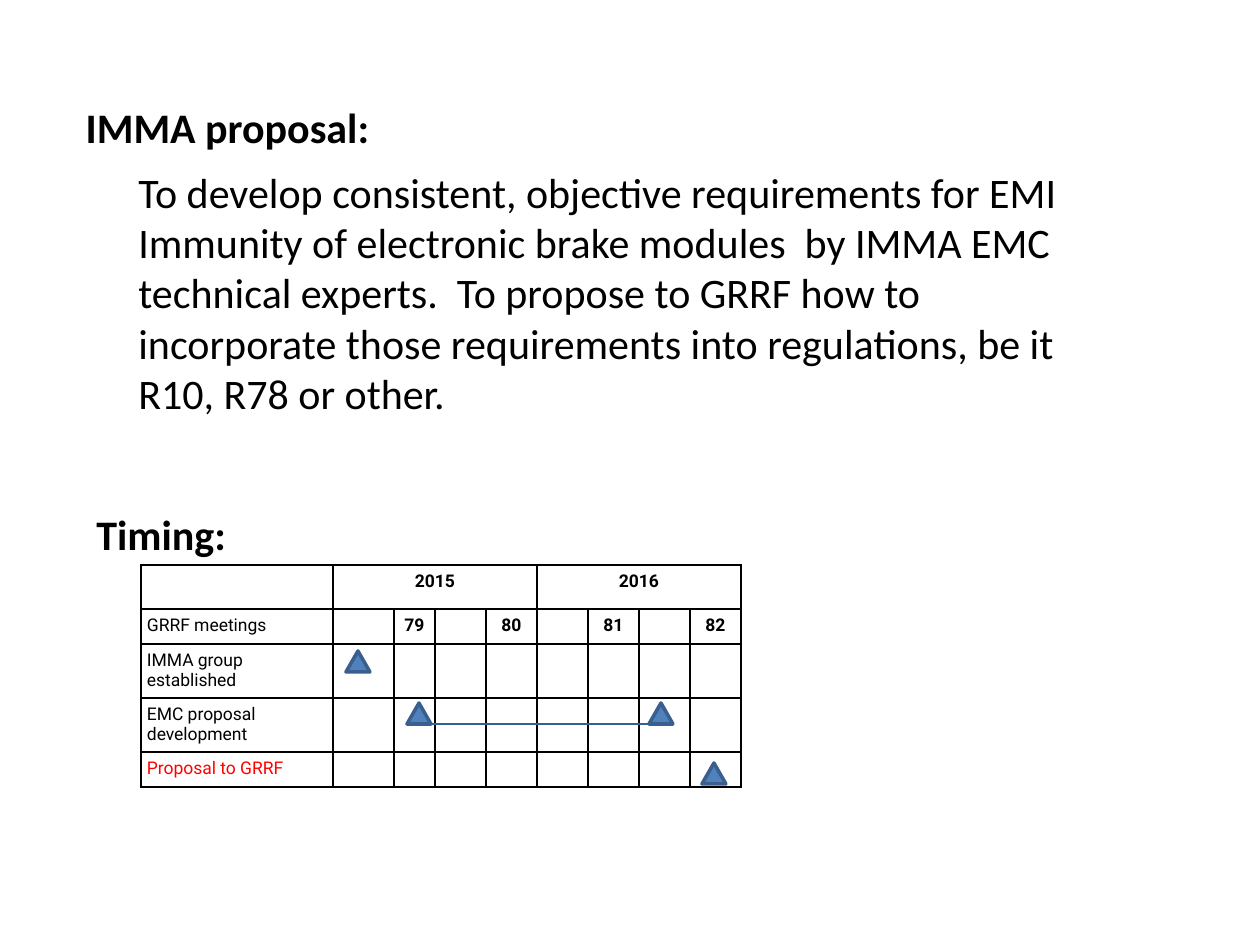
from lxml import etree
from pptx import Presentation
from pptx.dml.color import RGBColor
from pptx.enum.shapes import MSO_CONNECTOR, MSO_SHAPE
from pptx.enum.text import MSO_ANCHOR, MSO_AUTO_SIZE, PP_ALIGN
from pptx.oxml import parse_xml
from pptx.oxml.ns import nsdecls, qn
from pptx.util import Pt

BLACK = RGBColor(0, 0, 0)
RED = RGBColor(255, 0, 0)
BLUE = RGBColor(0x4F, 0x81, 0xBD)
EDGE = RGBColor(0x3A, 0x5F, 0x8C)
NAVY = RGBColor(0x37, 0x60, 0x92)
LEFT, CENTER = PP_ALIGN.LEFT, PP_ALIGN.CENTER
TOP = MSO_ANCHOR.TOP
FIT = MSO_AUTO_SIZE.SHAPE_TO_FIT_TEXT
TRIANGLE = MSO_SHAPE.ISOSCELES_TRIANGLE
STRAIGHT = MSO_CONNECTOR.STRAIGHT
SCALE = 914400 / 126

GOAL = (
    "To develop consistent, objective requirements for EMI Immunity of "
    "electronic brake modules  by IMMA EMC technical experts.  To propose to "
    "GRRF how to incorporate those requirements into regulations, be it "
    "R10, R78 or other."
)
COLS = [192, 61, 41] + [51] * 6
ROWS = [44, 35, 54, 54, 35]
CELLS = {
    (0, 1): "2015",
    (0, 5): "2016",
    (1, 0): "GRRF meetings",
    (1, 2): "79",
    (1, 4): "80",
    (1, 6): "81",
    (1, 8): "82",
    (2, 0): "IMMA group established",
    (3, 0): "EMC proposal development",
    (4, 0): "Proposal to GRRF",
}
MARKS = [(346, 651), (407, 703), (649, 703), (702, 763)]


def px(n):
    return round(n * SCALE)


class Deck:
    head = "Calibri"
    body = "Roboto"

    def __init__(self):
        self.prs = Presentation()
        self.prs.slide_width, self.prs.slide_height = px(1260), px(945)
        self.slide = self.prs.slides.add_slide(self.prs.slide_layouts[5])
        self.shapes = self.slide.shapes

    def style(self, para, name, size, bold, color=BLACK, align=LEFT):
        para.alignment = align
        font = para.font
        font.name, font.size, font.bold = name, Pt(size), bold
        font.color.rgb = color

    def fill(self, shape, text, bold):
        frame = shape.text_frame
        frame.word_wrap = True
        frame.auto_size = FIT
        frame.vertical_anchor = TOP
        frame.text = text
        self.style(frame.paragraphs[0], self.head, 24, bold)

    def title(self, x, y, w, h, text):
        shape = self.shapes.title
        shape.left, shape.top, shape.width, shape.height = map(px, (x, y, w, h))
        self.fill(shape, text, True)

    def text(self, x, y, w, h, text, bold=False):
        self.fill(self.shapes.add_textbox(*map(px, (x, y, w, h))), text, bold)

    def border(self, cell):
        props = cell._tc.get_or_add_tcPr()
        for i, side in enumerate(("lnL", "lnR", "lnT", "lnB")):
            props.insert(i, parse_xml(
                f'<a:{side} {nsdecls("a")} w="12700"><a:solidFill>'
                f'<a:srgbClr val="{BLACK}"/></a:solidFill></a:{side}>'))

    def cell(self, cell, text, col, color):
        cell.fill.background()
        self.border(cell)
        cell.margin_left = cell.margin_right = px(6)
        cell.margin_top = cell.margin_bottom = px(6)
        para = cell.text_frame.paragraphs[0]
        para.text = text
        self.style(para, self.body, 10, col > 0, color, CENTER if col else LEFT)
        if not text:
            etree.SubElement(para._p, qn("a:endParaRPr"), sz="1000")

    def table(self, x, y, cols, rows, cells):
        size = map(px, (x, y, sum(cols), sum(rows)))
        table = self.shapes.add_table(len(rows), len(cols), *size).table
        table.first_row = table.horz_banding = False
        for col, width in zip(table.columns, cols):
            col.width = px(width)
        for r, height in enumerate(rows):
            table.rows[r].height = px(height)
            color = RED if r == len(rows) - 1 else BLACK
            for c in range(len(cols)):
                self.cell(table.cell(r, c), cells.get((r, c), ""), c, color)
        for c in (1, 5):
            table.cell(0, c).merge(table.cell(0, c + 3))

    def mark(self, x, y):
        shape = self.shapes.add_shape(TRIANGLE, *map(px, (x, y, 24, 21)))
        shape.shadow.inherit = False
        shape.fill.solid()
        shape.fill.fore_color.rgb = BLUE
        shape.line.color.rgb = EDGE
        shape.line.width = Pt(2)

    def line(self, x1, y1, x2, y2):
        line = self.shapes.add_connector(STRAIGHT, *map(px, (x1, y1, x2, y2)))
        line.line.color.rgb = NAVY
        line.line.width = Pt(1.5)
        etree.SubElement(line._element.spPr, qn("a:effectLst"))


def main():
    deck = Deck()
    deck.title(73, 95, 368, 63, "IMMA proposal:")
    deck.text(126, 160, 1008, 267, GOAL)
    deck.text(84, 502, 601, 63, "Timing:", True)
    deck.table(141, 565, COLS, ROWS, CELLS)
    for spot in MARKS[:3]:
        deck.mark(*spot)
    deck.line(407, 724, 672, 724)
    deck.mark(*MARKS[3])
    deck.prs.save("out.pptx")


if __name__ == "__main__":
    main()
